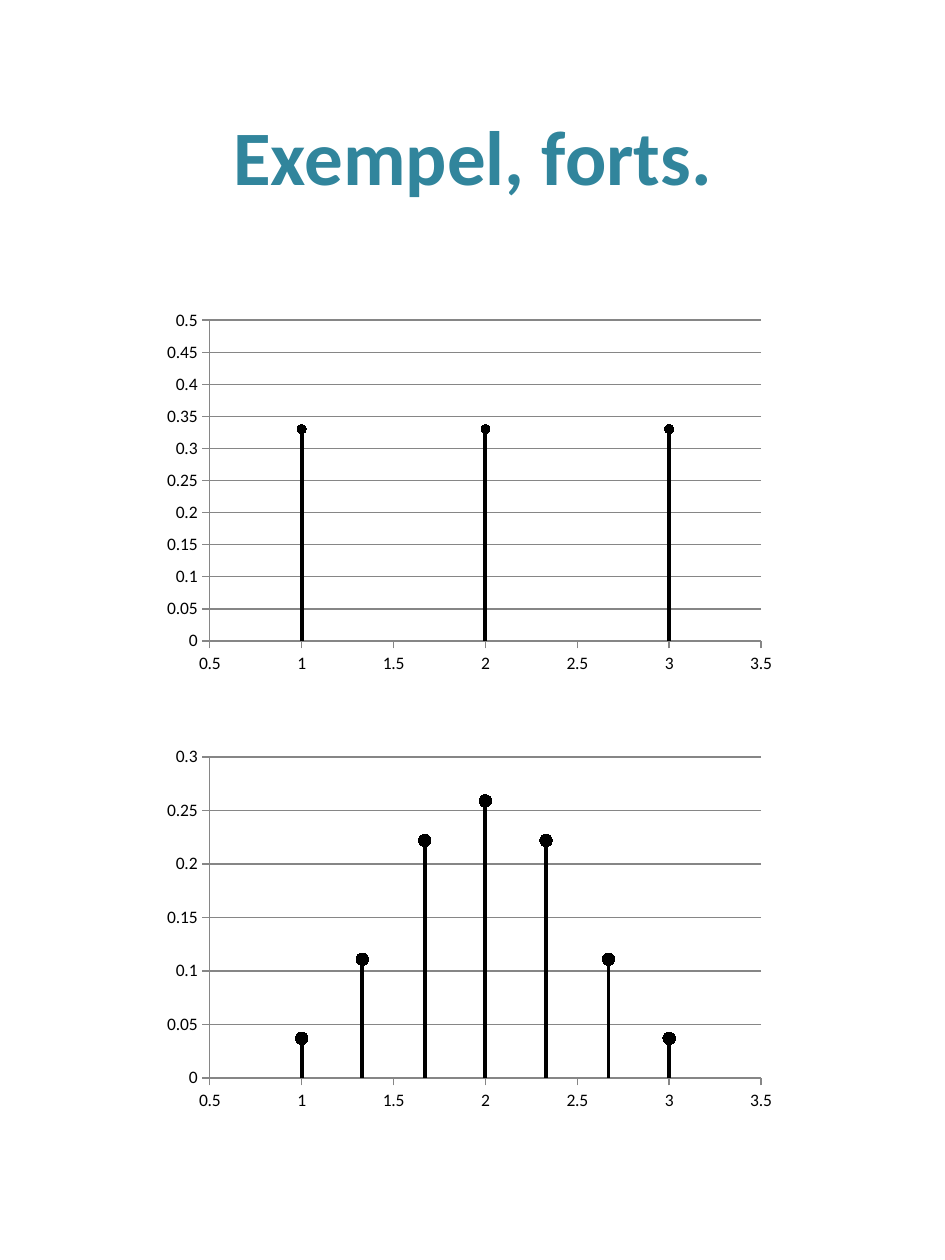
from dataclasses import dataclass

import lxml.etree
import pptx
import pptx.chart.data
import pptx.dml.color
import pptx.enum.chart
import pptx.enum.text
import pptx.oxml.ns
import pptx.util

XL = pptx.enum.chart
EMU_PER_PX = 914400 / 126
FONT = "Calibri"
COLORS = {"title": "31859C", "ink": "000000", "grid": "868686"}
CHART_LEFT, CHART_WIDTH, CHART_HEIGHT = 155, 630, 378
PLOT = {"x": 55, "y": 18, "w": 551, "h": 321}  # plot area inside a chart, px


@dataclass
class StemChart:
    kind: XL.XL_CHART_TYPE
    top: int
    points: list[tuple[float, float]]
    y_max: float
    dot_size: int
    joint_dots: bool  # all dots in one series, placed before the stems


def px(n: int) -> pptx.util.Emu:
    return pptx.util.Emu(round(n * EMU_PER_PX))


def rgb(name: str) -> pptx.dml.color.RGBColor:
    return pptx.dml.color.RGBColor.from_string(COLORS[name])


def set_line(line, color: str, width: float) -> None:
    line.color.rgb = rgb(color)
    line.width = pptx.util.Pt(width)


def style_axis(axis, low: float, high: float, step: float) -> None:
    axis.minimum_scale, axis.maximum_scale, axis.major_unit = low, high, step
    axis.major_tick_mark = XL.XL_TICK_MARK.OUTSIDE
    axis.minor_tick_mark = XL.XL_TICK_MARK.NONE
    axis.tick_labels.number_format = "General"
    axis.tick_labels.number_format_is_linked = False
    set_line(axis.format.line, "grid", 0.75)


def place_plot(chart) -> None:
    qn = pptx.oxml.ns.qn
    area = chart._chartSpace.find(".//" + qn("c:plotArea"))
    for old in area.findall(qn("c:layout")):
        area.remove(old)
    layout = lxml.etree.Element(qn("c:layout"))
    manual = lxml.etree.SubElement(layout, qn("c:manualLayout"))
    settings = {"layoutTarget": "inner", "xMode": "edge", "yMode": "edge"}
    for key, length in PLOT.items():
        whole = CHART_WIDTH if key in "xw" else CHART_HEIGHT
        settings[key] = f"{length / whole:.3f}"
    for tag, value in settings.items():
        lxml.etree.SubElement(manual, qn("c:" + tag)).set("val", value)
    area.insert(0, layout)


def style_series(series, is_stem: bool, dot_size: int) -> None:
    marker = series.marker
    if is_stem:
        set_line(series.format.line, "ink", 2.25)
        marker.style = XL.XL_MARKER_STYLE.NONE
        return
    series.format.line.fill.background()
    marker.style = XL.XL_MARKER_STYLE.CIRCLE
    marker.size = dot_size
    marker.format.fill.solid()
    marker.format.fill.fore_color.rgb = rgb("ink")
    set_line(marker.format.line, "ink", 0.75)


def add_stem_chart(slide, spec_: StemChart) -> None:
    # Stems rise from zero to each point; dots cap them
    stems = [[(x, 0), (x, y)] for x, y in spec_.points]
    if spec_.joint_dots:
        groups = [spec_.points] + stems
    else:
        groups = stems + [[point] for point in spec_.points]
    data = pptx.chart.data.XyChartData()
    for i, group in enumerate(groups, 1):
        series = data.add_series(f"Series {i}")
        for x, y in group:
            series.add_data_point(x, y)

    chart = slide.shapes.add_chart(
        spec_.kind, px(CHART_LEFT), px(spec_.top),
        px(CHART_WIDTH), px(CHART_HEIGHT), data).chart
    chart.has_legend = chart.has_title = False
    chart.font.name, chart.font.size = FONT, pptx.util.Pt(10)
    chart.font.color.rgb = rgb("ink")
    chart.plots[0].vary_by_categories = False
    place_plot(chart)

    style_axis(chart.category_axis, 0.5, 3.5, 0.5)
    chart.category_axis.has_major_gridlines = False
    style_axis(chart.value_axis, 0, spec_.y_max, 0.05)
    chart.value_axis.has_major_gridlines = True
    set_line(chart.value_axis.major_gridlines.format.line, "grid", 0.75)

    for series, group in zip(chart.plots[0].series, groups):
        style_series(series, group in stems, spec_.dot_size)


def add_title(slide, text: str) -> None:
    sp = slide.shapes.title
    sp.left, sp.top, sp.width, sp.height = px(48), px(50), px(850), px(210)
    tf = sp.text_frame
    tf.text = text
    tf.vertical_anchor = pptx.enum.text.MSO_ANCHOR.MIDDLE
    p = tf.paragraphs[0]
    p.alignment = pptx.enum.text.PP_ALIGN.CENTER
    p.font.name, p.font.size, p.font.bold = FONT, pptx.util.Pt(44), True
    p.font.color.rgb = rgb("title")


CHARTS = [
    StemChart(XL.XL_CHART_TYPE.XY_SCATTER_LINES_NO_MARKERS, 302,
              [(x, 0.33) for x in (1, 2, 3)], 0.5, 5, False),
    StemChart(XL.XL_CHART_TYPE.XY_SCATTER, 739,
              [(1, 0.037), (1.33, 0.111), (1.67, 0.222), (2, 0.259),
               (2.33, 0.222), (2.67, 0.111), (3, 0.037)], 0.3, 7, True),
]


def main() -> None:
    prs = pptx.Presentation()
    prs.slide_width, prs.slide_height = px(945), px(1260)
    slide = prs.slides.add_slide(prs.slide_layouts[5])
    add_title(slide, "Exempel, forts.")
    for chart in CHARTS:
        add_stem_chart(slide, chart)
    prs.save("out.pptx")


if __name__ == "__main__":
    main()
